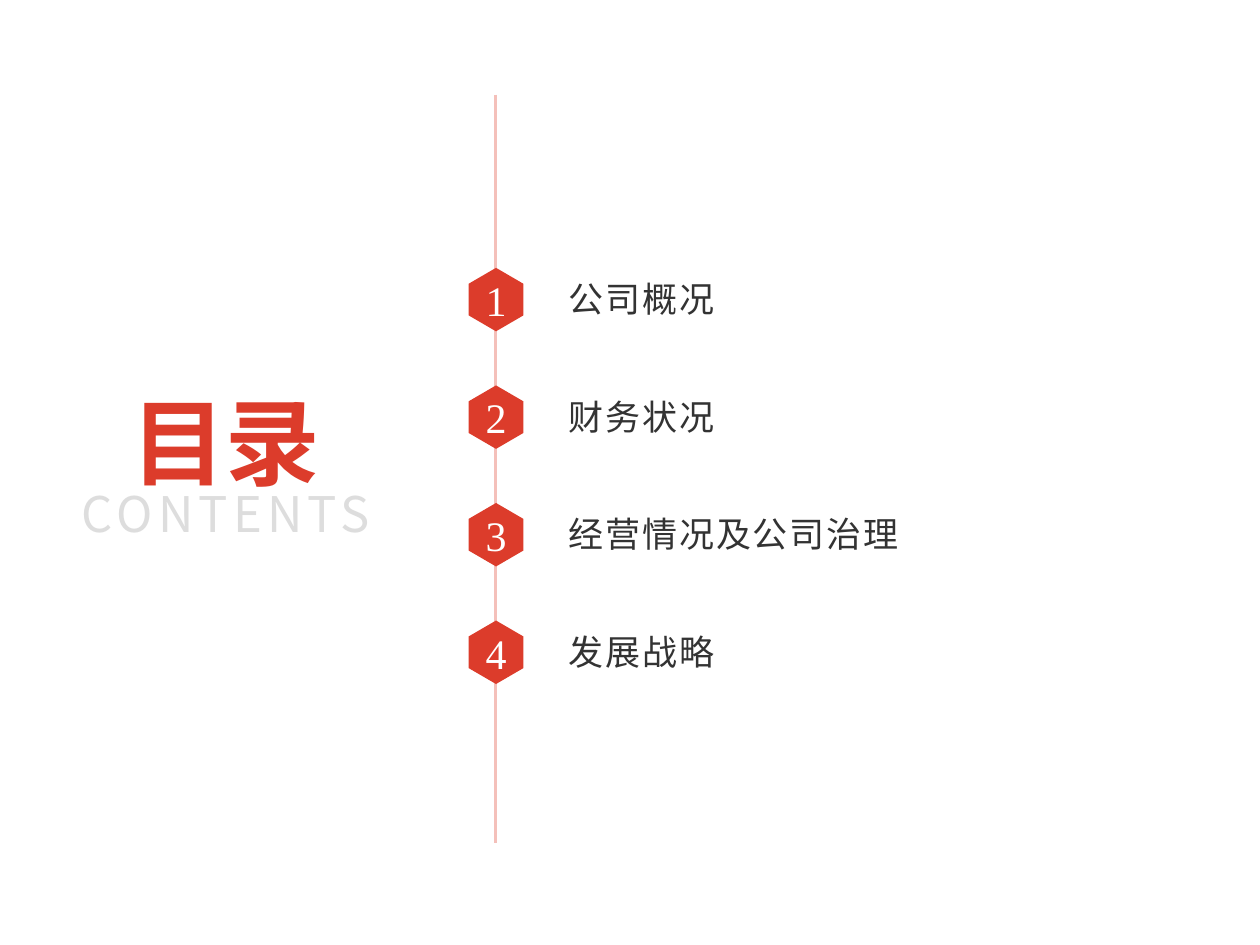
import pptx
import pptx.dml.color
import pptx.enum.shapes
import pptx.enum.text
import pptx.oxml.ns
import pptx.util
from lxml import etree

Cm = pptx.util.Cm
Pt = pptx.util.Pt
qn = pptx.oxml.ns.qn
ALIGN = pptx.enum.text.PP_ALIGN
MIDDLE = pptx.enum.text.MSO_ANCHOR.MIDDLE

SANS = "Noto Sans CJK SC"
RED = "DC3C2B"
ITEMS = ["公司概况", "财务状况", "经营情况及公司治理", "发展战略"]
FIRST_TOP = 5.4
PITCH = 2.37


def rgb(value):
    return pptx.dml.color.RGBColor.from_string(value)


def set_attrs(obj, values):
    for name, value in values.items():
        setattr(obj, name, value)


def write_text(sp, text, font, color, align, spacing=0, frame=None):
    tf = sp.text_frame
    set_attrs(tf, {"vertical_anchor": MIDDLE, "word_wrap": True, **(frame or {})})
    p = tf.paragraphs[0]
    p.alignment = align
    r = p.add_run()
    r.text = text
    set_attrs(r.font, font)
    r.font.color.rgb = rgb(color)
    rpr = r.font._element
    if spacing:
        rpr.set("spc", str(spacing * 100))
    rpr.find(qn("a:latin")).addnext(
        etree.Element(qn("a:ea"), typeface=font["name"]))


def add_timeline(s):
    straight = pptx.enum.shapes.MSO_CONNECTOR.STRAIGHT
    line = s.shapes.add_connector(straight, Cm(9.99), Cm(1.91), Cm(9.99), Cm(17))
    line.line.color.rgb = rgb("F4C0BA")
    line.line.width = Pt(2)
    etree.SubElement(line._element.spPr, qn("a:effectLst"))


def add_hexagon(s, left, top, number):
    w, h = 1.1, 1.28
    points = [(w / 2, 0), (w, h / 4), (w, h * 3 / 4),
              (w / 2, h), (0, h * 3 / 4), (0, h / 4)]
    corners = [(Cm(left + x), Cm(top + y)) for x, y in points]
    builder = s.shapes.build_freeform(*corners[0])
    builder.add_line_segments(corners[1:], close=True)
    sp = builder.convert_to_shape()
    sp.shadow.inherit = False
    sp.fill.solid()
    sp.fill.fore_color.rgb = rgb(RED)
    sp.line.fill.background()
    write_text(sp, str(number), {"name": "Times New Roman", "size": Pt(24)},
               "FFFFFF", ALIGN.CENTER)


def add_item(s, number, text):
    top = FIRST_TOP + (number - 1) * PITCH
    sp = s.shapes.add_textbox(Cm(10.97), Cm(top - 0.13), Cm(11.1), Cm(1.5))
    write_text(sp, text, {"name": SANS, "size": Pt(20)}, "333333", ALIGN.LEFT,
               spacing=1, frame={"margin_left": Cm(0.5)})
    add_hexagon(s, 9.45, top, number)


def add_heading(s, top, height, text, font, color, spacing=0):
    sp = s.shapes.add_textbox(Cm(0.65), Cm(top), Cm(7.8), Cm(height))
    write_text(sp, text, {"name": SANS, **font}, color, ALIGN.CENTER,
               spacing=spacing, frame={"margin_top": 0, "margin_bottom": 0})


def main():
    prs = pptx.Presentation()
    set_attrs(prs, {"slide_width": Cm(25.4), "slide_height": Cm(19.05)})
    s = prs.slides.add_slide(prs.slide_layouts[6])
    add_timeline(s)
    for number, text in enumerate(ITEMS, 1):
        add_item(s, number, text)
    add_heading(s, 7.49, 2.8, "目录", {"size": Pt(54), "bold": True}, RED)
    add_heading(s, 9.59, 1.5, "CONTENTS", {"size": Pt(28)}, "DDDDDD", spacing=3)
    prs.save("out.pptx")


if __name__ == "__main__":
    main()
